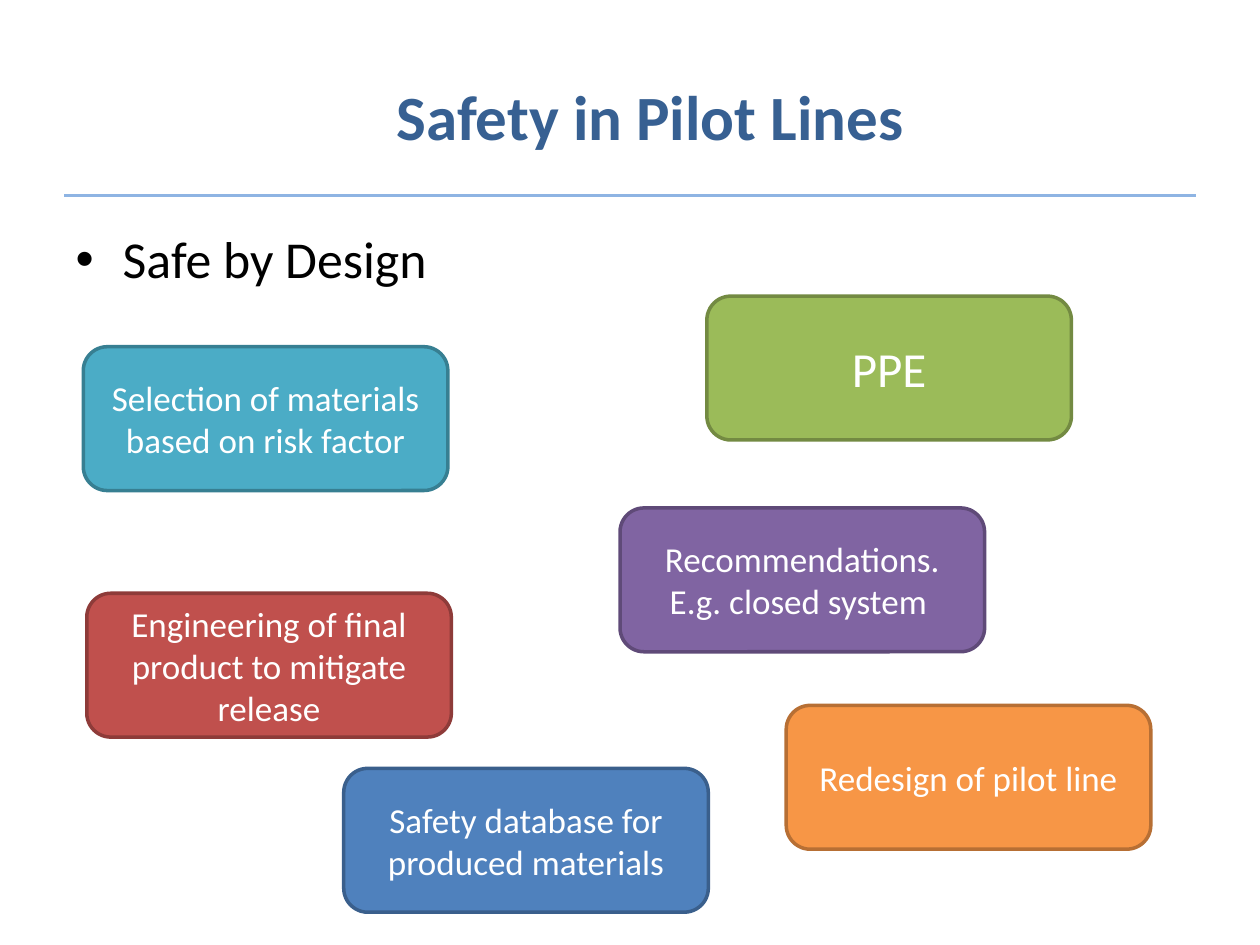
import lxml.etree
import pptx
import pptx.util
import pptx.dml.color
import pptx.enum.shapes
import pptx.enum.text
import pptx.oxml.ns

Cm = pptx.util.Cm
Pt = pptx.util.Pt
ALIGN = pptx.enum.text.PP_ALIGN
ANCHOR = pptx.enum.text.MSO_ANCHOR

COLOURS = {
    "title": "376092", "rule": "8EB4E3", "body": "000000", "card_text": "FFFFFF",
    "teal": "4BACC6", "teal_edge": "377F92",
    "green": "9BBB59", "green_edge": "738A42",
    "purple": "8064A2", "purple_edge": "5F4A78",
    "red": "C0504D", "red_edge": "8E3B39",
    "orange": "F79646", "orange_edge": "B76F34",
    "blue": "4F81BD", "blue_edge": "3A5F8C",
}

CARD_SIZE = (7.35, 2.9)
CARDS = [
    ("Selection of materials based on risk factor", 1.68, 6.99, "teal", 20),
    ("PPE", 14.25, 5.97, "green", 28),
    ("Recommendations. E.g. closed system ", 12.5, 10.24, "purple", 20),
    ("Engineering of final product to mitigate release", 1.75, 11.96, "red", 20),
    ("Redesign of pilot line", 15.85, 14.22, "orange", 20),
    ("Safety database for produced materials", 6.93, 15.49, "blue", 20),
]


def colour(name):
    return pptx.dml.color.RGBColor.from_string(COLOURS[name])


def set_attributes(target, values):
    for name, value in values.items():
        setattr(target, name, value)


def add_element(parent, tag, **attributes):
    lxml.etree.SubElement(parent, pptx.oxml.ns.qn(tag), attributes)


def place(shape, box):
    names = ("left", "top", "width", "height")
    set_attributes(shape, dict(zip(names, map(Cm, box))))


def write_text(shape, text, colour_name, frame_format, paragraph_format, font_format):
    frame = shape.text_frame
    set_attributes(frame, {"word_wrap": True, "auto_size": pptx.enum.text.MSO_AUTO_SIZE.NONE})
    set_attributes(frame, frame_format)
    paragraph = frame.paragraphs[0]
    set_attributes(paragraph, paragraph_format)
    run = paragraph.add_run()
    run.text = text
    set_attributes(run.font, {"name": "Calibri", **font_format})
    run.font.color.rgb = colour(colour_name)
    return paragraph


def add_heading(slide, box):
    left, top, width, height = box
    line_y = Cm(top + height)
    rule = slide.shapes.add_connector(
        pptx.enum.shapes.MSO_CONNECTOR.STRAIGHT, Cm(left), line_y, Cm(left + width), line_y)
    rule.line.color.rgb = colour("rule")
    rule.line.width = Pt(2)
    add_element(rule._element.spPr, "a:effectLst")
    title = slide.shapes.title
    place(title, (left + 4.01, top, 15.6, height - 0.03))
    write_text(title, "Safety in Pilot Lines", "title",
               {"vertical_anchor": ANCHOR.MIDDLE}, {"alignment": ALIGN.CENTER},
               {"size": Pt(36), "bold": True})


def add_list(slide, box):
    body = slide.placeholders[1]
    place(body, box)
    paragraph = write_text(body, "Safe by Design", "body",
                           {"vertical_anchor": ANCHOR.TOP},
                           {"alignment": ALIGN.LEFT, "space_before": Pt(0)},
                           {"size": Pt(29.6)})
    properties = paragraph._p.get_or_add_pPr()
    properties.set("marL", str(Cm(0.95)))
    properties.set("indent", str(-Cm(0.95)))
    add_element(properties, "a:buFont", typeface="Arial")
    add_element(properties, "a:buChar", char="•")


def add_card(slide, box, text, colour_name, size):
    card = slide.shapes.add_shape(
        pptx.enum.shapes.MSO_SHAPE.ROUNDED_RECTANGLE, *map(Cm, box))
    card.shadow.inherit = False
    card.fill.solid()
    card.fill.fore_color.rgb = colour(colour_name)
    card.line.color.rgb = colour(colour_name + "_edge")
    card.line.width = Pt(2)
    write_text(card, text, "card_text", {"vertical_anchor": ANCHOR.MIDDLE},
               {"alignment": ALIGN.CENTER}, {"size": Pt(size)})


def main():
    presentation = pptx.Presentation()
    set_attributes(presentation, {"slide_width": Cm(25.4), "slide_height": Cm(19.05)})
    slide = presentation.slides.add_slide(presentation.slide_layouts[1])
    add_heading(slide, (1.3, 0.74, 22.8, 3.2))
    add_list(slide, (1.27, 4.45, 7.75, 1.73))
    for text, left, top, colour_name, size in CARDS:
        add_card(slide, (left, top, *CARD_SIZE), text, colour_name, size)
    presentation.save("out.pptx")


if __name__ == "__main__":
    main()
